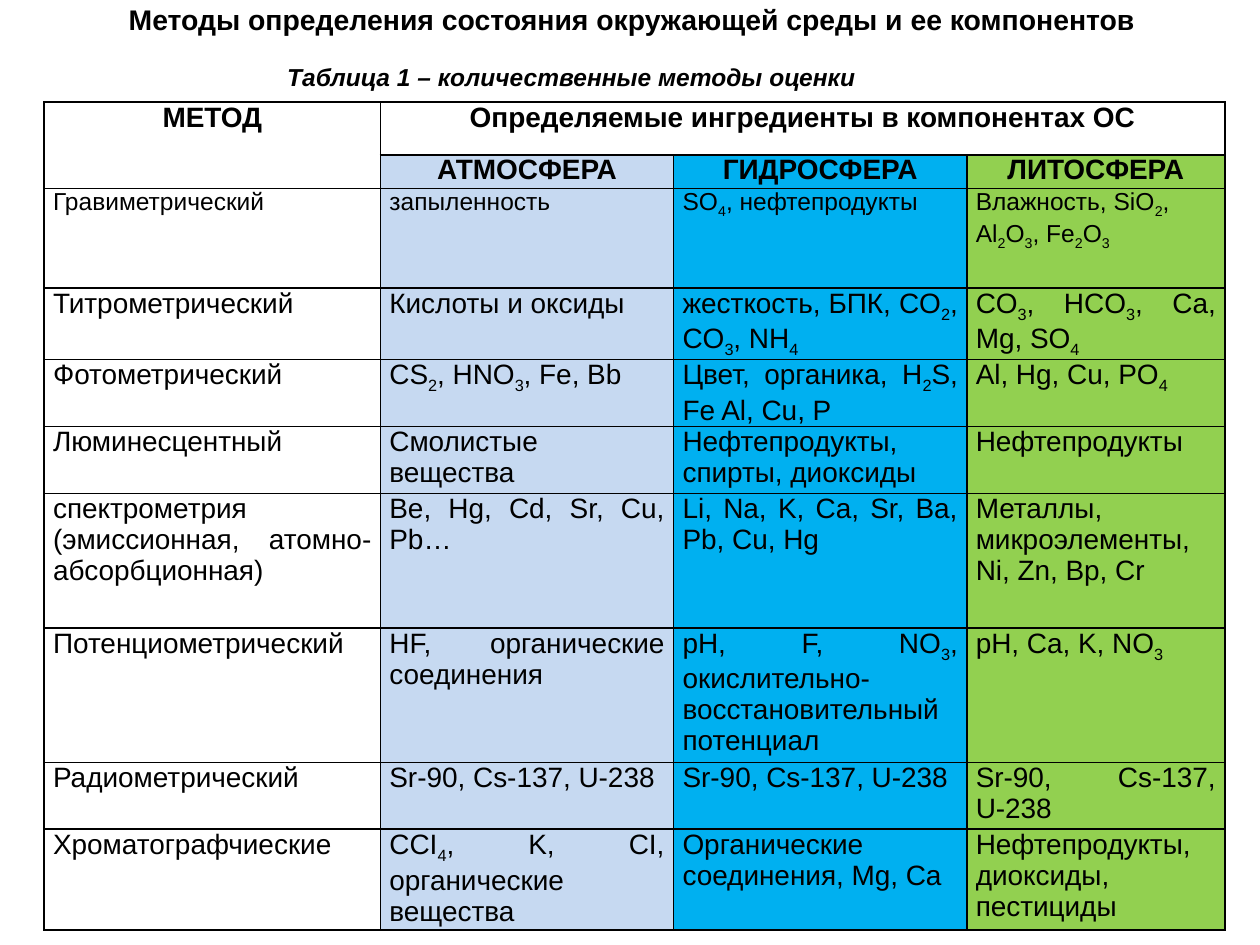
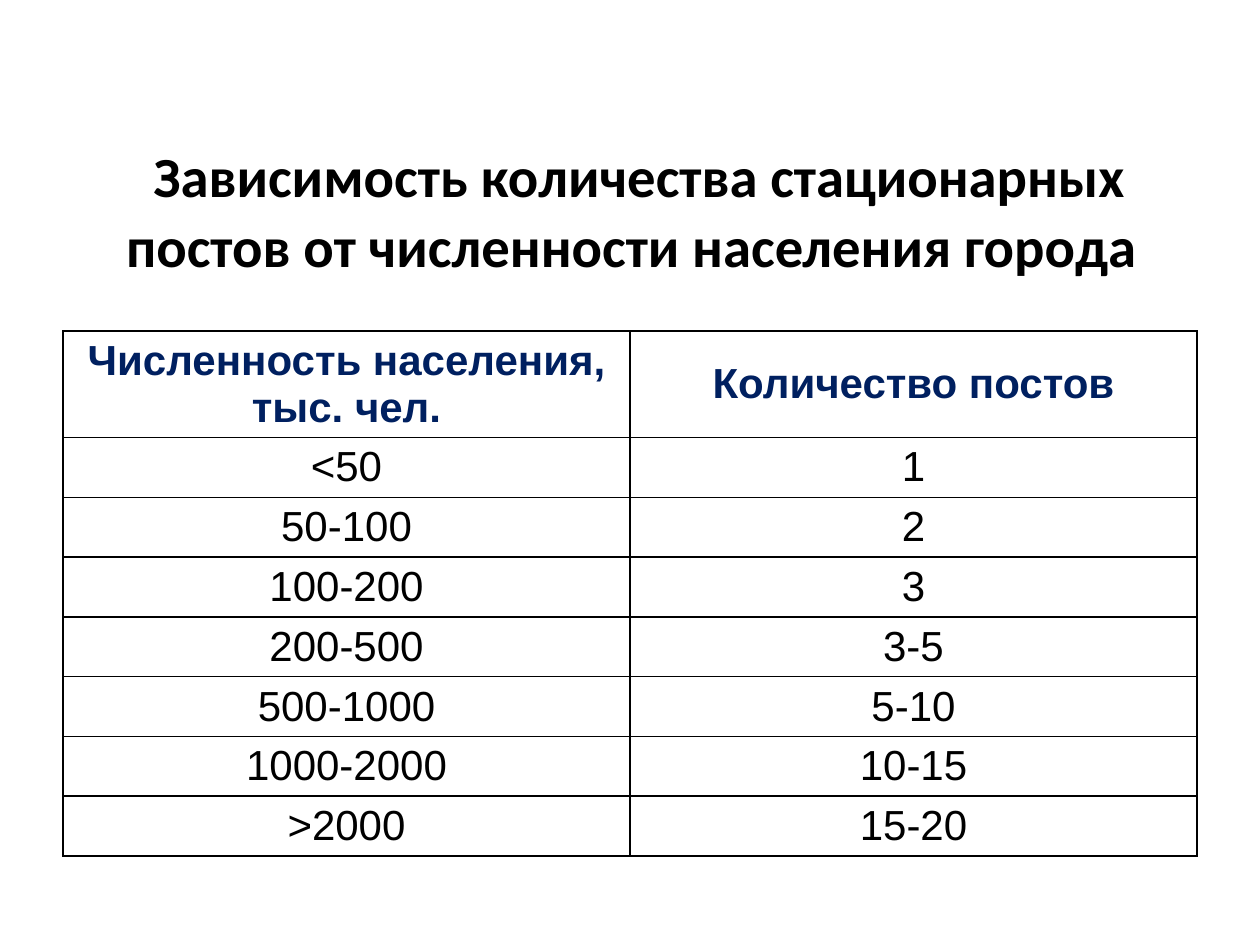
from dataclasses import dataclass
from typing import Optional

from lxml.etree import fromstring
from pptx import Presentation
from pptx.dml.color import RGBColor
from pptx.enum.text import MSO_ANCHOR, MSO_AUTO_SIZE, PP_ALIGN
from pptx.oxml.ns import nsdecls
from pptx.util import Cm, Pt

BLACK = RGBColor(0x00, 0x00, 0x00)
NAVY = RGBColor(0x00, 0x20, 0x60)
AIR = RGBColor(0xC6, 0xD9, 0xF1)
WATER = RGBColor(0x00, 0xB0, 0xF0)
EARTH = RGBColor(0x92, 0xD0, 0x50)
SUBSCRIPT = "-25000"


@dataclass(frozen=True)
class Style:
    size: float
    font: str = "Arial"
    bold: bool = False
    italic: bool = False
    color: RGBColor = BLACK
    align: PP_ALIGN = PP_ALIGN.CENTER


@dataclass(frozen=True)
class Area:
    left: float
    top: float
    width: float
    height: float

    def lengths(self) -> tuple:
        return Cm(self.left), Cm(self.top), Cm(self.width), Cm(self.height)


@dataclass(frozen=True)
class CellLook:
    fill: Optional[RGBColor] = None
    anchor: MSO_ANCHOR = MSO_ANCHOR.MIDDLE
    side_margin: float = 0.25
    top_margin: float = 0.13


TITLE = Style(32.4, "Calibri", bold=True)
TITLE_LEAD = Style(39.6, "Calibri")
SMALL_TITLE = Style(16.2, bold=True)
CAPTION = Style(14, bold=True, italic=True, align=PP_ALIGN.JUSTIFY)
METHOD_HEAD = Style(16, bold=True)
METHOD_BODY = Style(16, align=PP_ALIGN.JUSTIFY)
METHOD_SMALL = Style(14, align=PP_ALIGN.JUSTIFY)
METHOD_LEFT = Style(16, align=PP_ALIGN.LEFT)
POSTS_HEAD = Style(24, bold=True, color=NAVY)
POSTS_BODY = Style(24)

# An underscore marks the next digit as a subscript
METHODS = [
    ("МЕТОД", "Определяемые ингредиенты в компонентах ОС", "", ""),
    ("", "АТМОСФЕРА", "ГИДРОСФЕРА", "ЛИТОСФЕРА"),
    ("Гравиметрический", "запыленность", "SO_4, нефтепродукты",
     "Влажность, SiO_2,\nAl_2O_3, Fe_2O_3"),
    ("Титрометрический", "Кислоты и оксиды", "жесткость, БПК, CO_2, CO_3, NH_4",
     "CO_3, HCO_3, Ca, Mg, SO_4"),
    ("Фотометрический", "CS_2, HNO_3, Fe, Bb", "Цвет, органика, H_2S, Fe Al, Cu, P",
     "Al, Hg, Cu, PO_4"),
    ("Люминесцентный", "Смолистые вещества", "Нефтепродукты, спирты, диоксиды",
     "Нефтепродукты"),
    ("спектрометрия\n(эмиссионная, атомно-абсорбционная)", "Be, Hg, Cd, Sr, Cu, Pb…",
     "Li, Na, K, Ca, Sr, Ba, Pb, Cu, Hg", "Металлы, микроэлементы, Ni, Zn, Bp, Cr"),
    ("Потенциометрический", "HF, органические соединения",
     "pH, F, NO_3, окислительно-восстановительный потенциал", "pH, Ca, K, NO_3"),
    ("Радиометрический", "Sr-90, Cs-137, U-238", "Sr-90, Cs-137, U-238",
     "Sr-90, Cs-137, U-238"),
    ("Хроматографчиеские", "CCI_4, K, CI, органические вещества",
     "Органические соединения, Mg, Ca", "Нефтепродукты, диоксиды, пестициды"),
]
METHOD_COLUMNS = [6.78, 5.91, 5.91, 5.2]
METHOD_ROWS = [1.06, 0.68, 2.01, 1.35, 1.35, 1.35, 2.71, 2.71, 1.35, 2.03]

POSTS = [
    ("Численность населения, тыс. чел.", "Количество постов"),
    ("<50", "1"),
    ("50-100", "2"),
    ("100-200", "3"),
    ("200-500", "3-5"),
    ("500-1000", "5-10"),
    ("1000-2000", "10-15"),
    (">2000", "15-20"),
]
POSTS_COLUMNS = [11.43, 11.43]
POSTS_ROWS = [2.13] + [1.2] * 7


# Text
def add_span(para, text: str, style: Style, subscript: bool = False) -> None:
    span = para.add_run()
    span.text = text
    font = span.font
    font.name, font.size = style.font, Pt(style.size)
    font.bold, font.italic = style.bold, style.italic
    font.color.rgb = style.color
    if subscript:
        span._r.get_or_add_rPr().set("baseline", SUBSCRIPT)


def write(frame, text: str, style: Style) -> None:
    for number, line in enumerate(text.split("\n")):
        para = frame.add_paragraph() if number else frame.paragraphs[0]
        para.alignment = style.align
        plain, *marked = line.split("_")
        add_span(para, plain, style)
        for part in marked:
            add_span(para, part[0], style, subscript=True)
            if part[1:]:
                add_span(para, part[1:], style)


def place_title(slide, area: Area):
    title = slide.shapes.title
    title.left, title.top, title.width, title.height = area.lengths()
    frame = title.text_frame
    frame.word_wrap = True
    frame.auto_size = MSO_AUTO_SIZE.NONE
    frame.vertical_anchor = MSO_ANCHOR.MIDDLE
    return frame


# Tables
def add_grid(slide, left: float, top: float, columns: list, rows: list):
    area = Area(left, top, sum(columns), sum(rows))
    table = slide.shapes.add_table(len(rows), len(columns), *area.lengths()).table
    table.first_row = table.horz_banding = False
    for column, width in zip(table.columns, columns):
        column.width = Cm(width)
    for row, height in zip(table.rows, rows):
        row.height = Cm(height)
    return table


def format_cell(cell, look: CellLook) -> None:
    cell.vertical_anchor = look.anchor
    cell.margin_left = cell.margin_right = Cm(look.side_margin)
    cell.margin_top = cell.margin_bottom = Cm(look.top_margin)
    if look.fill is None:
        cell.fill.background()
    else:
        cell.fill.solid()
        cell.fill.fore_color.rgb = look.fill
    properties = cell._tc.get_or_add_tcPr()
    for place, side in enumerate("LRTB"):
        properties.insert(place, fromstring(
            f'<a:ln{side} {nsdecls("a")} w="{Pt(1)}"><a:solidFill>'
            f'<a:srgbClr val="{BLACK}"/></a:solidFill></a:ln{side}>'))


def method_style(row: int, column: int) -> Style:
    if row < 2:
        return METHOD_HEAD
    if row == 2:
        return METHOD_SMALL
    if row == 8 and column in (1, 2):
        return METHOD_LEFT
    return METHOD_BODY


# Slides
def add_methods_slide(deck) -> None:
    slide = deck.slides.add_slide(deck.slide_layouts[5])
    frame = place_title(slide, Area(1.3, 0, 22.86, 0.78))
    frame.margin_top = frame.margin_bottom = 0
    write(frame, "Методы определения состояния окружающей среды и ее компонентов",
          SMALL_TITLE)

    table = add_grid(slide, 0.89, 2.06, METHOD_COLUMNS, METHOD_ROWS)
    table.cell(0, 0).merge(table.cell(1, 0))
    table.cell(0, 1).merge(table.cell(0, 3))
    fills = [None, AIR, WATER, EARTH]
    for row, texts in enumerate(METHODS):
        for column, text in enumerate(texts):
            cell = table.cell(row, column)
            fill = fills[column] if row else None
            format_cell(cell, CellLook(fill, MSO_ANCHOR.TOP, 0.18, 0))
            if text:
                write(cell.text_frame, text, method_style(row, column))

    # Table caption
    box = slide.shapes.add_textbox(*Area(4.29, 1.12, 19, 0.86).lengths())
    frame = box.text_frame
    frame.word_wrap = True
    frame.vertical_anchor = MSO_ANCHOR.MIDDLE
    write(frame, "Таблица 1 – количественные методы оценки", CAPTION)
    frame.paragraphs[0]._p.get_or_add_pPr().set("indent", str(Cm(1.25)))


def add_posts_slide(deck) -> None:
    slide = deck.slides.add_slide(deck.slide_layouts[5])
    frame = place_title(slide, Area(1.3, 2.51, 22.86, 3.18))
    add_span(frame.paragraphs[0], " ", TITLE_LEAD)
    write(frame, "Зависимость количества стационарных постов "
                 "от численности населения города", TITLE)

    table = add_grid(slide, 1.27, 6.67, POSTS_COLUMNS, POSTS_ROWS)
    for row, texts in enumerate(POSTS):
        for column, text in enumerate(texts):
            cell = table.cell(row, column)
            format_cell(cell, CellLook())
            write(cell.text_frame, text, POSTS_BODY if row else POSTS_HEAD)


def main() -> None:
    deck = Presentation()
    deck.slide_width, deck.slide_height = Cm(25.4), Cm(19.05)
    add_methods_slide(deck)
    add_posts_slide(deck)
    deck.save("out.pptx")


if __name__ == "__main__":
    main()
